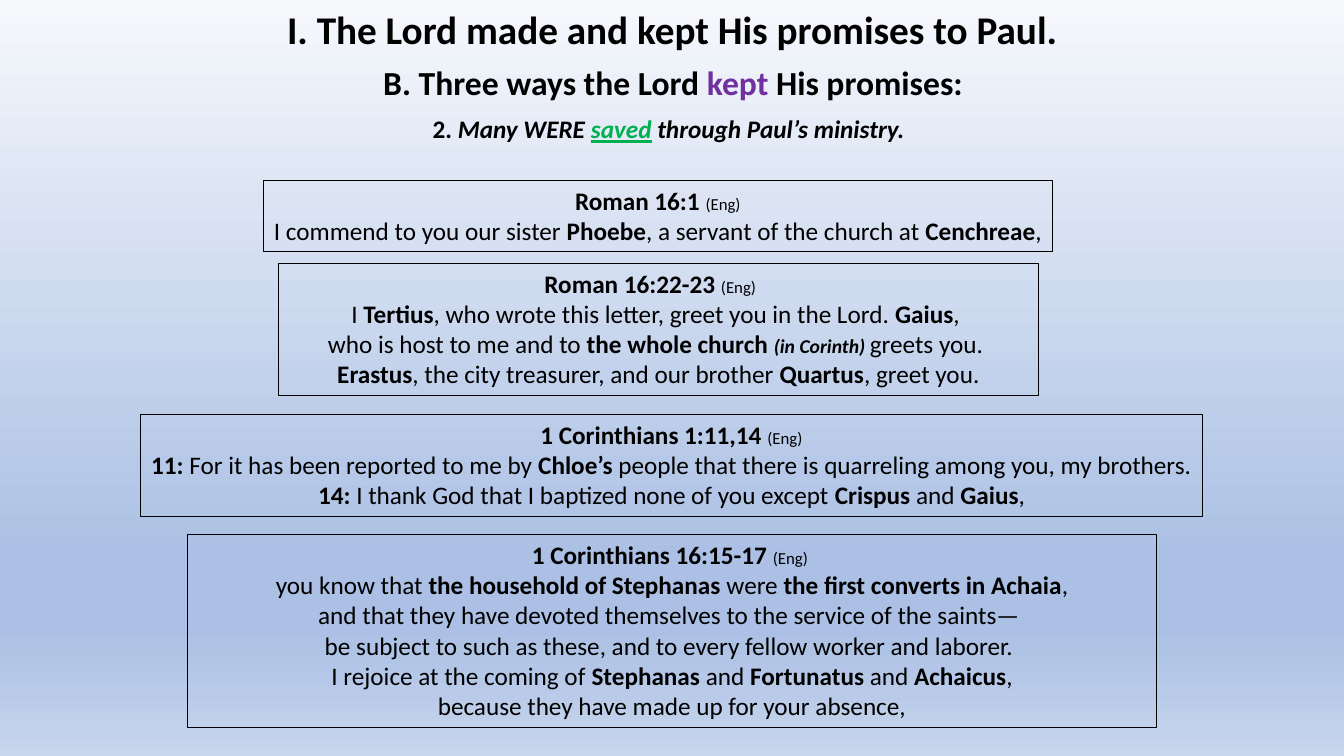
import copy
import pptx
import pptx.util
import pptx.dml.color
import pptx.enum.shapes
import pptx.enum.text
import pptx.oxml.ns

Inches = pptx.util.Inches
BLACK = "000000"
PURPLE = "7030A0"
GREEN = "00B050"


def paint(color, code):
    color.rgb = pptx.dml.color.RGBColor.from_string(code)


def write(line, text, size=18, bold=False, italic=False, under=False,
          color=BLACK, indent=0):
    """Add one run to a centred paragraph; indent is its right margin in inches."""
    line.alignment = pptx.enum.text.PP_ALIGN.CENTER
    line._p.get_or_add_pPr().set("marR", str(Inches(indent)))
    run = line.add_run()
    run.text = text
    font = run.font
    font.name = "Calibri"
    font.size = pptx.util.Pt(size)
    font.bold, font.italic, font.underline = bold, italic, under
    paint(font.color, color)


deck = pptx.Presentation()
deck.slide_width, deck.slide_height = Inches(13.33), Inches(7.5)
slide = deck.slides.add_slide(deck.slide_layouts[5])
shapes = slide.shapes

# Background gradient, light at the top
fill = slide.background.fill
fill.gradient()
fill.gradient_angle = 270
stops = slide.element.find(".//" + pptx.oxml.ns.qn("a:gsLst"))
for _ in range(2):
    stops.append(copy.deepcopy(stops[0]))
shades = [(0, "F6F8FC"), (0.74, "ABC0E4"), (0.83, "ABC0E4"), (1, "C7D5ED")]
for stop, (place, shade) in zip(fill.gradient_stops, shades):
    stop.position = place
    paint(stop.color, shade)

# Title and the two headings under it
title = shapes.title
point = shapes.add_textbox(0, 0, 0, 0)
topic = shapes.add_textbox(0, 0, 0, 0)
heads = [
    (title, (0, 0, 13.33, 0.57), 28, [
        ("I. The Lord made and kept His promises to Paul.", {})]),
    (point, (0, 0.57, 13.35, 0.5), 24, [
        ("B. Three ways the Lord ", {}),
        ("kept", {"color": PURPLE}),
        (" His promises:", {})]),
    (topic, (3.73, 1.08, 5.86, 0.4), 18, [
        ("2. ", {}),
        ("Many WERE ", {"italic": True}),
        ("saved", {"italic": True, "under": True, "color": GREEN}),
        (" through Paul’s ministry. ", {"italic": True})]),
]
for head, place, size, runs in heads:
    head.left, head.top, head.width, head.height = map(Inches, place)
    frame = head.text_frame
    frame.word_wrap = True
    frame.auto_size = pptx.enum.text.MSO_AUTO_SIZE.NONE
    frame.vertical_anchor = pptx.enum.text.MSO_ANCHOR.TOP
    for text, style in runs:
        write(frame.paragraphs[0], text, size=size, bold=True, **style)

# Verses: "|" parts the runs, a leading "*" is bold, a leading "~" is a side note
verses = [
    ((2.61, 1.79, 7.83, 0.71), "Roman 16:1 ", 0, [
        "I commend to you our sister |*Phoebe|, a servant of the church at |*Cenchreae|,"]),
    ((2.76, 2.61, 7.54, 1.31), "Roman 16:22-23 ", 0.16, [
        "I |*Tertius|, who wrote this letter, greet you in the Lord. |*Gaius|, ",
        "who is host to me and to |*the whole church |~(in Corinth) |greets you. ",
        "*Erastus|, the city treasurer, and our brother |*Quartus|, greet you."]),
    ((1.39, 4.11, 10.54, 1.01), "1 Corinthians 1:11,14 ", 0, [
        "*11: |For it has been reported to me by |*Chloe’s"
        "| people that there is quarreling among you, my brothers.",
        "*14: |I thank God that I baptized none of you except |*Crispus| and |*Gaius|,"]),
    ((1.86, 5.3, 9.61, 1.92), "1 Corinthians 16:15-17 ", 0.04, [
        "you know that |*the household of Stephanas| were |*the first converts in Achaia|,",
        "and that they have devoted themselves to the service of the saints— ",
        "be subject to such as these, and to every fellow worker and laborer. ",
        "I rejoice at the coming of |*Stephanas| and |*Fortunatus| and |*Achaicus|,",
        "because they have made up for your absence,"]),
]
styles = {"*": {"bold": True}, "~": {"size": 14, "bold": True, "italic": True}}
for place, source, indent, lines in verses:
    box = shapes.add_shape(pptx.enum.shapes.MSO_SHAPE.RECTANGLE, *map(Inches, place))
    box.shadow.inherit = False
    box.fill.background()
    paint(box.line.color, BLACK)
    box.line.width = pptx.util.Pt(0.75)
    frame = box.text_frame
    frame.word_wrap = True
    frame.vertical_anchor = pptx.enum.text.MSO_ANCHOR.TOP
    first = frame.paragraphs[0]
    write(first, source, bold=True, indent=indent)
    write(first, "(Eng)", size=12, indent=indent)
    for line in lines:
        para = frame.add_paragraph()
        for part in line.split("|"):
            write(para, part.lstrip("*~"), **styles.get(part[0], {}))

deck.save("out.pptx")
